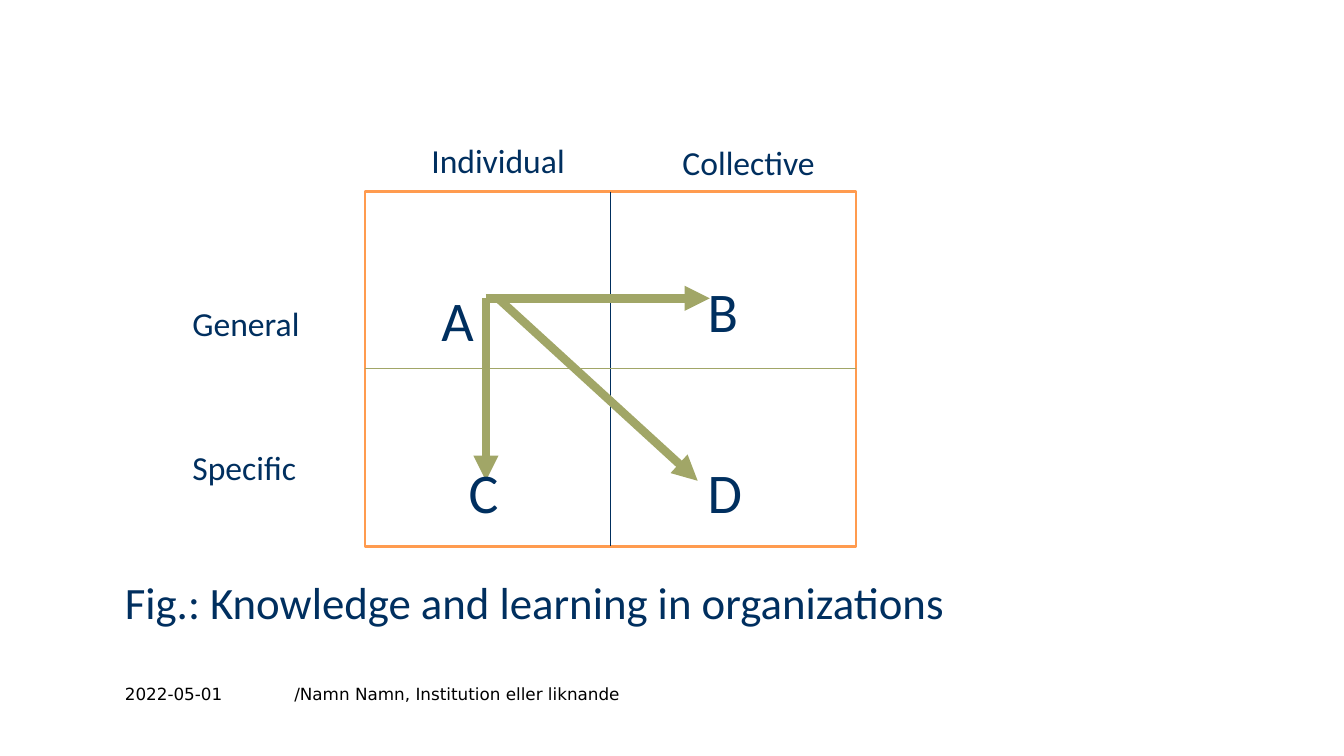
from dataclasses import dataclass

from lxml.etree import SubElement
from pptx import Presentation
from pptx.dml.color import RGBColor
from pptx.enum.shapes import MSO_CONNECTOR as Connector, MSO_SHAPE as Preset
from pptx.enum.text import MSO_ANCHOR as Anchor, MSO_AUTO_SIZE as AutoSize
from pptx.oxml.ns import qn
from pptx.shapes.autoshape import Shape
from pptx.shapes.connector import Connector as Line
from pptx.slide import Slide
from pptx.util import Inches, Pt


@dataclass(frozen=True)
class Theme:
    navy: str = "002F5F"
    divider_navy: str = "002E5D"
    olive: str = "A1A667"
    orange: str = "FF9B4F"
    white: str = "FFFFFF"
    black: str = "000000"
    body_font: str = "Calibri"
    footer_font: str = "DejaVu Sans"
    footer_size: int = 12
    heading_size: int = 24
    caption_size: int = 32
    letter_size: int = 40
    thin: float = 0.75
    frame: float = 2
    arrow: float = 6


THEME = Theme()


@dataclass(frozen=True)
class Label:
    text: str
    left: float
    top: float
    width: float
    height: float
    size: int
    font: str = THEME.body_font
    color: str = THEME.navy
    anchor: Anchor = Anchor.TOP


@dataclass(frozen=True)
class Arrow:
    start: tuple[float, float]
    end: tuple[float, float]


@dataclass(frozen=True)
class Divider:
    begin_side: int
    end_side: int
    color: str


FOOTER = [
    Label("2022-05-01", 1.14, 6.73, 1.64, 0.31, THEME.footer_size,
          THEME.footer_font, THEME.black, Anchor.MIDDLE),
    Label("/Namn Namn, Institution eller liknande", 2.82, 6.73, 6.55, 0.57,
          THEME.footer_size, THEME.footer_font, THEME.black),
]
HEADINGS = [
    Label("Individual", 4.18, 1.34, 1.76, 0.5, THEME.heading_size),
    Label("Collective", 6.67, 1.36, 1.58, 0.5, THEME.heading_size),
    Label("General", 1.81, 2.96, 1.58, 0.5, THEME.heading_size),
    Label("Specific", 1.81, 4.38, 1.58, 0.5, THEME.heading_size),
]
CAPTION = Label("Fig.: Knowledge and learning in organizations",
                1.14, 5.65, 10.13, 0.64, THEME.caption_size)
DIVIDERS = [Divider(0, 2, THEME.divider_navy), Divider(1, 3, THEME.olive)]
ARROWS = [
    Arrow((4.82, 2.96), (7.04, 2.96)),
    Arrow((4.82, 2.96), (4.82, 4.77)),
    Arrow((4.94, 2.96), (6.92, 4.77)),
]
LETTERS = [
    Label("A", 4.28, 2.78, 0.64, 0.77, THEME.letter_size),
    Label("B", 6.92, 2.69, 0.67, 0.77, THEME.letter_size),
    Label("C", 4.55, 4.49, 0.53, 0.77, THEME.letter_size),
    Label("D", 6.92, 4.49, 0.67, 0.77, THEME.letter_size),
]


def add_label(slide: Slide, label: Label) -> None:
    box = slide.shapes.add_textbox(Inches(label.left), Inches(label.top),
                                   Inches(label.width), Inches(label.height))
    frame = box.text_frame
    frame.word_wrap = True
    frame.auto_size = AutoSize.NONE
    frame.vertical_anchor = label.anchor
    frame.text = label.text
    font = frame.paragraphs[0].runs[0].font
    font.name = label.font
    font.size = Pt(label.size)
    font.color.rgb = RGBColor.from_string(label.color)


def add_matrix(slide: Slide) -> Shape:
    matrix = slide.shapes.add_shape(Preset.RECTANGLE, Inches(3.62), Inches(1.9),
                                    Inches(4.87), Inches(3.52))
    matrix.shadow.inherit = False
    matrix.fill.solid()
    matrix.fill.fore_color.rgb = RGBColor.from_string(THEME.white)
    matrix.line.color.rgb = RGBColor.from_string(THEME.orange)
    matrix.line.width = Pt(THEME.frame)
    return matrix


def add_line(slide: Slide, start: tuple[float, float], end: tuple[float, float],
             color: str, width: float) -> Line:
    line = slide.shapes.add_connector(Connector.STRAIGHT,
                                      *map(Inches, start), *map(Inches, end))
    line.line.color.rgb = RGBColor.from_string(color)
    line.line.width = Pt(width)
    SubElement(line._element.spPr, qn("a:effectLst"))
    return line


def add_divider(slide: Slide, matrix: Shape, divider: Divider) -> None:
    line = add_line(slide, (0, 0), (0, 0), divider.color, THEME.thin)
    line.begin_connect(matrix, divider.begin_side)
    line.end_connect(matrix, divider.end_side)


def add_arrow(slide: Slide, arrow: Arrow) -> None:
    line = add_line(slide, arrow.start, arrow.end, THEME.olive, THEME.arrow)
    SubElement(line.line._get_or_add_ln(), qn("a:tailEnd"), type="triangle")


def main() -> None:
    deck = Presentation()
    deck.slide_width, deck.slide_height = Inches(13.33), Inches(7.5)
    slide = deck.slides.add_slide(deck.slide_layouts[6])

    # Footer
    for label in FOOTER:
        add_label(slide, label)

    # Two-by-two matrix
    matrix = add_matrix(slide)
    for divider in DIVIDERS:
        add_divider(slide, matrix, divider)

    # Headings and caption
    for label in [*HEADINGS, CAPTION]:
        add_label(slide, label)

    # Learning paths between the quadrants
    for arrow in ARROWS:
        add_arrow(slide, arrow)
    for letter in LETTERS:
        add_label(slide, letter)

    deck.save("out.pptx")


if __name__ == "__main__":
    main()
